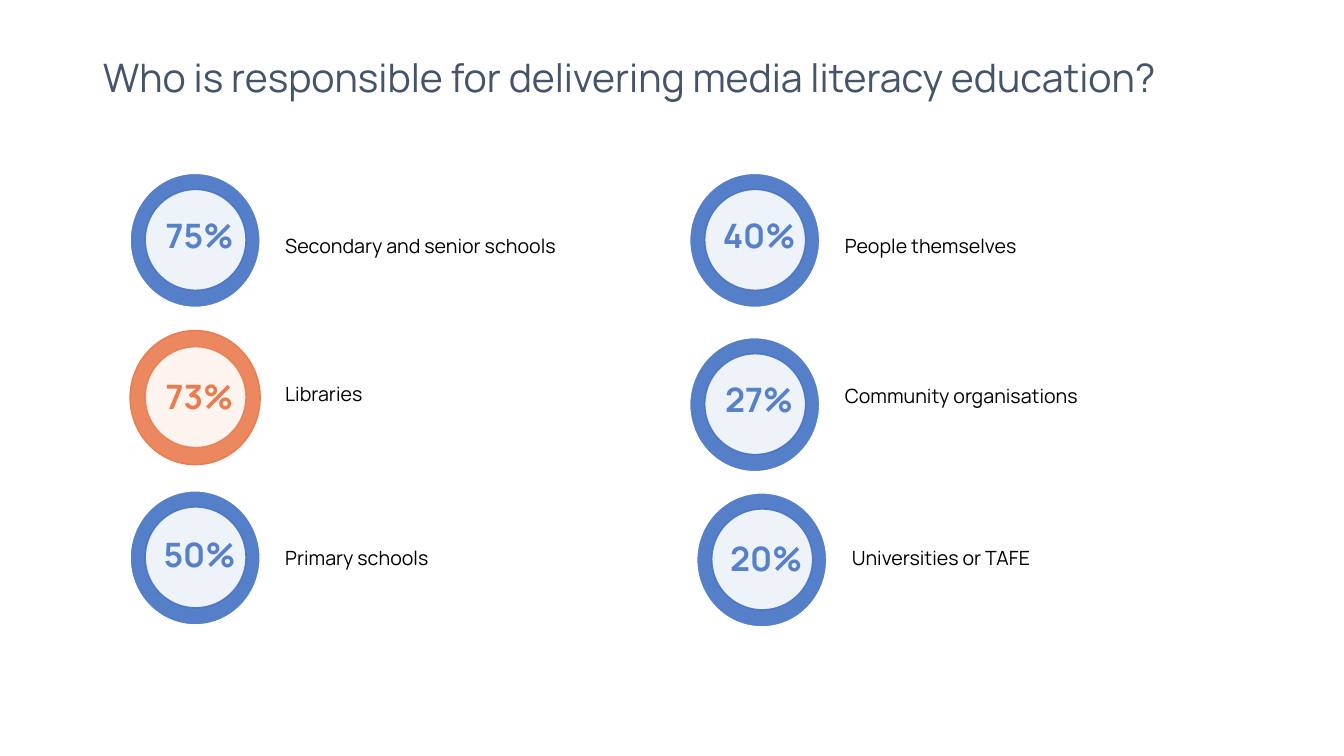
from lxml.etree import SubElement
from pptx import Presentation
from pptx.dml.color import RGBColor
from pptx.enum.shapes import MSO_SHAPE
from pptx.enum.text import MSO_ANCHOR, MSO_AUTO_SIZE, PP_ALIGN
from pptx.oxml.ns import qn
from pptx.util import Inches, Pt

FONT = "Manrope"
SLATE = RGBColor(0x44, 0x54, 0x6A)
BLUE = RGBColor(0x44, 0x72, 0xC4)
SOFT_BLUE = RGBColor(0x56, 0x80, 0xCA)
ORANGE = RGBColor(0xE9, 0x7C, 0x4F)
WHITE = RGBColor(0xFF, 0xFF, 0xFF)
BLACK = RGBColor(0, 0, 0)

LEFT_COLUMN, RIGHT_COLUMN = 1.29, 6.84
RING_WIDTH, RING_HEIGHT = 1.29, 1.33
HOLE_SIZE = 1.0
HOLE_INSET_X, HOLE_INSET_Y = 0.15, 0.16
PERCENT_INSET = 0.19
LABEL_INSET = 1.44

# Each entry: share, label, ring left, ring top, share drop, label drop.
RESPONSIBLE = [
    ("75%", "Secondary and senior schools", LEFT_COLUMN, 1.72, 0.36, 0.55),
    ("73%", "Libraries", LEFT_COLUMN, 3.28, 0.40, 0.46),
    ("50%", "Primary schools", LEFT_COLUMN, 4.87, 0.38, 0.50),
    ("40%", "People themselves", RIGHT_COLUMN, 1.72, 0.36, 0.55),
    ("27%", "Community organisations", RIGHT_COLUMN, 3.35, 0.36, 0.41),
    ("20%", "Universities or TAFE", RIGHT_COLUMN + 0.07, 4.89, 0.40, 0.48),
]
HIGHLIGHT = "Libraries"


def set_font(para, size, color, bold=False):
    para.font.name = FONT
    para.font.size = Pt(size)
    para.font.color.rgb = color
    para.font.bold = bold


def make_translucent(fill_parent):
    for color in fill_parent.iter(qn("a:srgbClr")):
        SubElement(color, qn("a:alpha")).set("val", "90000")


def add_disc(group, left, top, width, height, fill, line):
    disc = group.shapes.add_shape(
        MSO_SHAPE.OVAL, Inches(left), Inches(top), Inches(width), Inches(height))
    disc.shadow.inherit = False
    disc.fill.solid()
    disc.fill.fore_color.rgb = fill
    make_translucent(disc.fill._xPr)
    disc.line.color.rgb = line
    disc.line.width = Pt(1)
    return disc


def add_ring(page, left, top, color, edge):
    group = page.shapes.add_group_shape()
    add_disc(group, left, top, RING_WIDTH, RING_HEIGHT, color, edge)
    hole = add_disc(group, left + HOLE_INSET_X, top + HOLE_INSET_Y,
                    HOLE_SIZE, HOLE_SIZE, WHITE, color)
    make_translucent(hole.line._ln)


def add_text(page, text, left, top, width, height, size, color,
             bold=False, align=PP_ALIGN.LEFT):
    box = page.shapes.add_textbox(
        Inches(left), Inches(top), Inches(width), Inches(height))
    box.text_frame.word_wrap = True
    box.text_frame.auto_size = MSO_AUTO_SIZE.SHAPE_TO_FIT_TEXT
    para = box.text_frame.paragraphs[0]
    para.text = text
    para.alignment = align
    set_font(para, size, color, bold)


def add_title(page, text):
    title = page.shapes.title
    title.left, title.top = Inches(0.92), Inches(0.4)
    title.width, title.height = Inches(11.5), Inches(0.79)
    title.text_frame.text = text
    title.text_frame.vertical_anchor = MSO_ANCHOR.MIDDLE
    para = title.text_frame.paragraphs[0]
    para.alignment = PP_ALIGN.LEFT
    para.line_spacing = 0.9
    set_font(para, 28, SLATE)


def add_share(page, share, label, left, top, share_drop, label_drop):
    highlighted = label == HIGHLIGHT
    ring_color = ORANGE if highlighted else BLUE
    edge = ORANGE if highlighted else WHITE
    share_color = ORANGE if highlighted else SOFT_BLUE
    add_ring(page, left, top, ring_color, edge)
    add_text(page, share, left + PERCENT_INSET, top + share_drop, 1, 0.5,
             24, share_color, True, PP_ALIGN.CENTER)
    add_text(page, label, left + LABEL_INSET, top + label_drop, 3.69, 0.34,
             14, BLACK)


def main():
    deck = Presentation()
    deck.slide_width, deck.slide_height = Inches(13.33), Inches(7.5)
    page = deck.slides.add_slide(deck.slide_layouts[5])
    add_title(page, "Who is responsible for delivering media literacy education?")
    for entry in RESPONSIBLE:
        add_share(page, *entry)
    deck.save("out.pptx")


if __name__ == "__main__":
    main()
